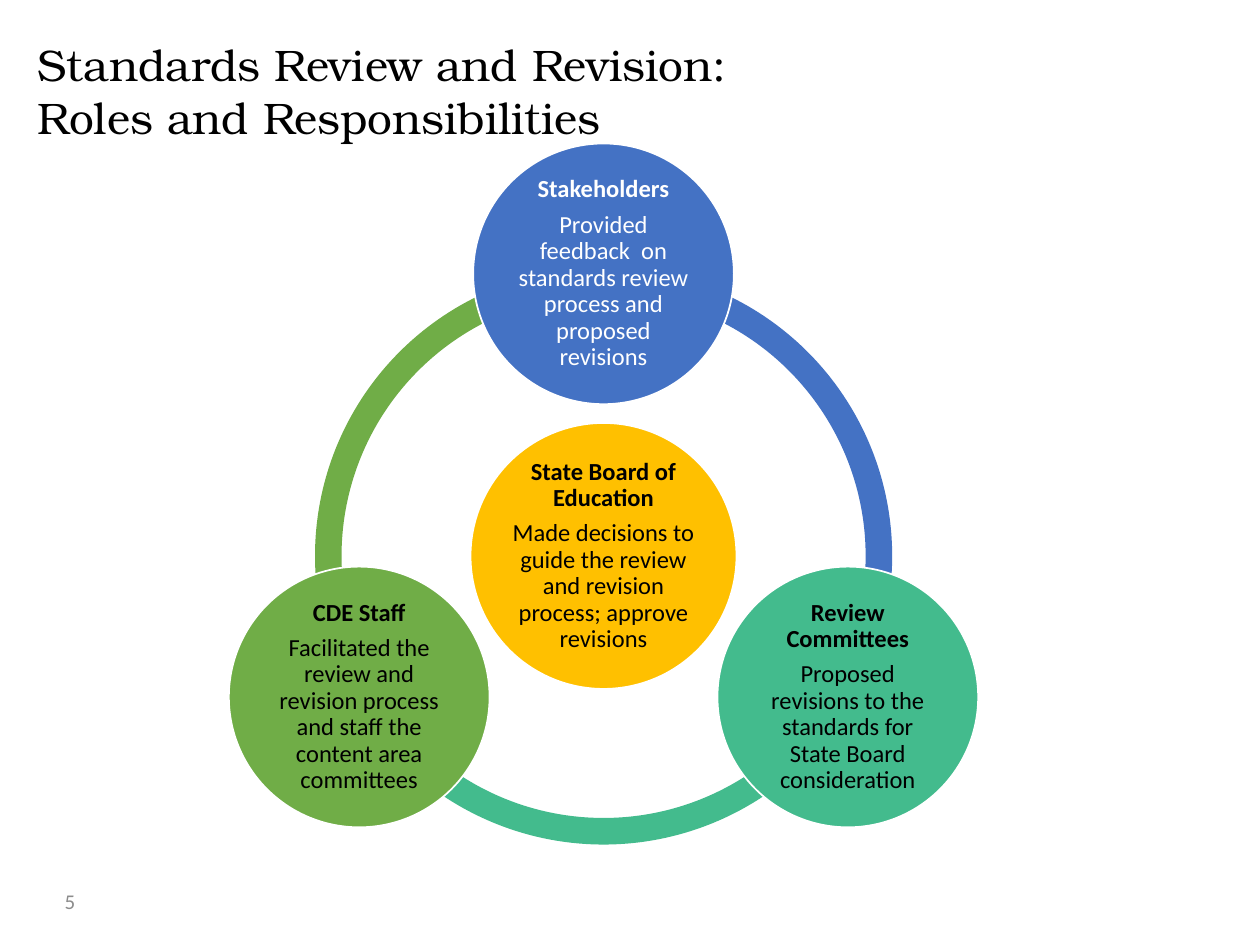
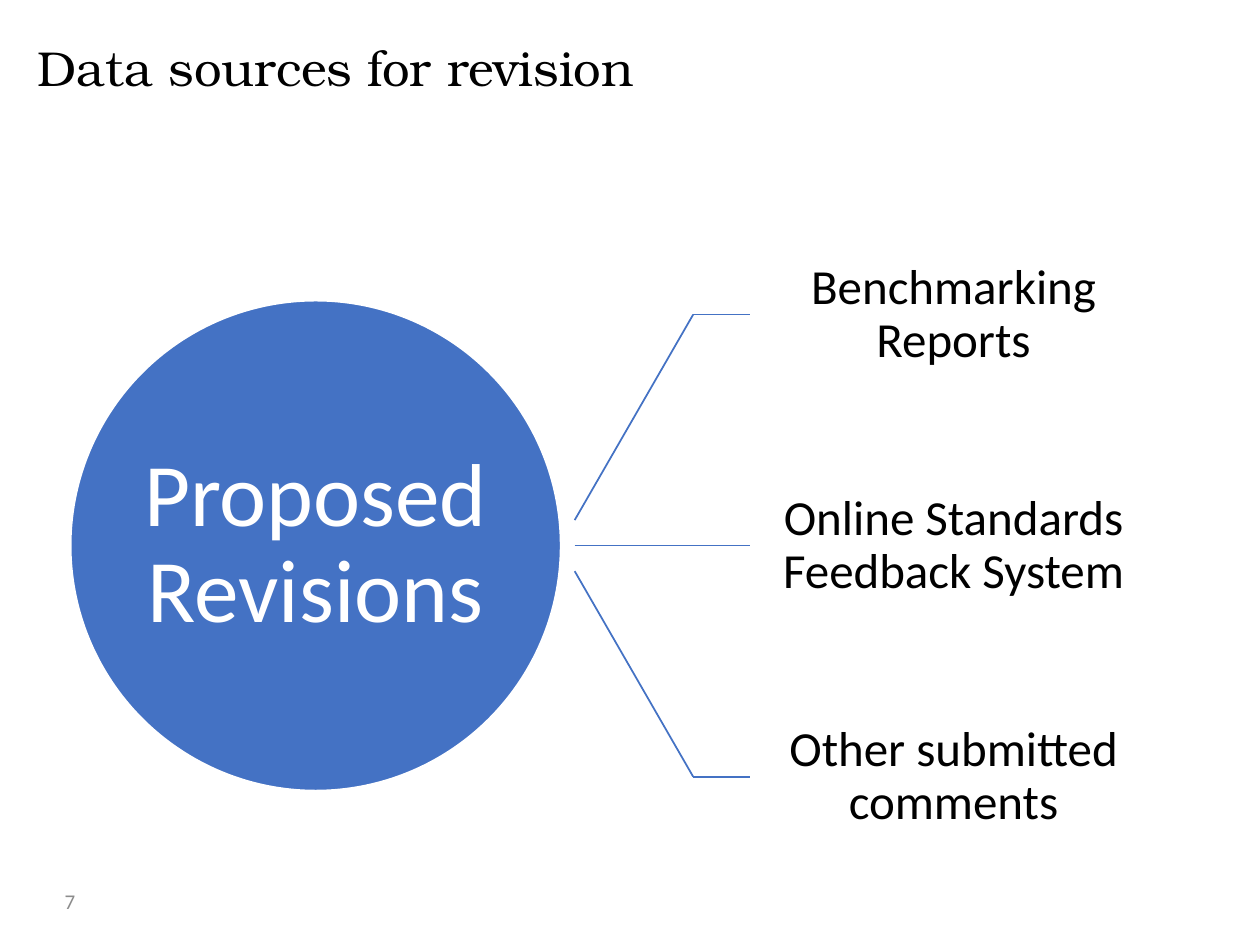
import math

from lxml import etree
from pptx import Presentation
from pptx.dml.color import RGBColor
from pptx.enum.shapes import MSO_CONNECTOR, MSO_SHAPE
from pptx.enum.text import MSO_ANCHOR, PP_ALIGN
from pptx.oxml.ns import qn
from pptx.util import Pt

BLUE = RGBColor(0x44, 0x72, 0xC4)
TEAL = RGBColor(0x43, 0xBB, 0x8D)
GREEN = RGBColor(0x70, 0xAD, 0x47)
GOLD = RGBColor(0xFF, 0xC0, 0x00)
GRAY = RGBColor(0x8C, 0x8C, 0x8C)
BLACK = RGBColor(0, 0, 0)
WHITE = RGBColor(0xFF, 0xFF, 0xFF)

TITLE_FONT = "TeX Gyre Bonum"
BODY_FONT = "Calibri"

LEFT, CENTER = PP_ALIGN.LEFT, PP_ALIGN.CENTER
TOP, MIDDLE = MSO_ANCHOR.TOP, MSO_ANCHOR.MIDDLE
ELLIPSE, BLOCK_ARC = MSO_SHAPE.OVAL, MSO_SHAPE.BLOCK_ARC
STRAIGHT = MSO_CONNECTOR.STRAIGHT
LEFT_SIDE = 1

STAKEHOLDERS = ("Stakeholders", "Provided feedback  on standards review process and proposed revisions")
COMMITTEES = ("Review Committees", "Proposed revisions to the standards for State Board consideration")
STAFF = ("CDE Staff", "Facilitated the review and revision process and staff the content area committees")
BOARD = ("State Board of Education", "Made decisions to guide the review and revision process; approve revisions")

ROLES = [
    (STAKEHOLDERS, BLUE, WHITE),
    (COMMITTEES, TEAL, BLACK),
    (STAFF, GREEN, BLACK),
]
SOURCES = ["Benchmarking Reports", "Online Standards Feedback System", "Other submitted comments"]


def write_text(shape, lines, size, color, inset, anchor=MIDDLE, align=CENTER,
               font=BODY_FONT, diagram=False):
    frame = shape.text_frame
    frame.word_wrap = True
    frame.vertical_anchor = anchor
    frame.margin_left = frame.margin_right = Pt(inset)
    frame.margin_top = frame.margin_bottom = Pt(inset)
    frame.text = "\n".join(lines)
    for paragraph in frame.paragraphs:
        paragraph.alignment = align
        paragraph.font.name = font
        paragraph.font.size = Pt(size)
        paragraph.font.color.rgb = color
        if diagram:
            paragraph.line_spacing = 0.9
            paragraph.space_after = Pt(0.35 * size)


def add_text_box(slide, left, top, width, height):
    return slide.shapes.add_textbox(Pt(left), Pt(top), Pt(width), Pt(height))


def add_circle(slide, center_x, center_y, diameter, fill):
    circle = slide.shapes.add_shape(
        ELLIPSE, Pt(center_x - diameter / 2), Pt(center_y - diameter / 2), Pt(diameter), Pt(diameter))
    circle.shadow.inherit = False
    circle.fill.solid()
    circle.fill.fore_color.rgb = fill
    circle.line.color.rgb = WHITE
    circle.line.width = Pt(1)
    return circle


def add_line(slide, start, end):
    line = slide.shapes.add_connector(STRAIGHT, *(Pt(value) for value in start + end))
    line.line.color.rgb = BLUE
    line.line.width = Pt(1)
    etree.SubElement(line._element.spPr, qn("a:effectLst"))
    return line


def add_titled_slide(presentation, title, title_size, number):
    slide = presentation.slides.add_slide(presentation.slide_layouts[6])
    title_box = add_text_box(slide, 21.6, 21.6, 620.6, 56.2)
    write_text(title_box, [title], title_size, BLACK, 0, TOP, LEFT, TITLE_FONT)
    number_box = add_text_box(slide, 21.6, 500.4, 36.7, 28.8)
    write_text(number_box, [number], 12, GRAY, 3.6)
    return slide


def add_role(slide, center_x, center_y, diameter, role, fill, color):
    circle = add_circle(slide, center_x, center_y, diameter, fill)
    write_text(circle, role, 14, color, 1.4, diagram=True)
    circle.text_frame.paragraphs[0].font.bold = True


def add_role_cycle(slide, left, top, size):
    center_x, center_y = left + size / 2, top + size / 2
    orbit = 161.2
    step = 360 / len(ROLES)
    angles = [270 + step * index for index in range(len(ROLES))]
    for angle, (_, fill, _) in zip(angles, ROLES):
        arc = slide.shapes.add_shape(BLOCK_ARC, Pt(left), Pt(top), Pt(size), Pt(size))
        arc.adjustments[0] = angle % 360 * 0.6
        arc.adjustments[1] = (angle + step) % 360 * 0.6
        arc.adjustments[2] = 0.046
        arc.shadow.inherit = False
        arc.fill.solid()
        arc.fill.fore_color.rgb = fill
        arc.line.fill.background()
    add_role(slide, center_x, center_y, 152, BOARD, GOLD, BLACK)
    for angle, (role, fill, color) in zip(angles, ROLES):
        turn = math.radians(angle)
        add_role(slide, center_x + orbit * math.cos(turn), center_y + orbit * math.sin(turn),
                 149, role, fill, color)


def add_source_fan(slide, left, top, width, height):
    diameter = 280
    middle = top + height / 2
    fan_x, elbow_x, label_x = left + 288, left + 355.7, left + 388.2
    row_height = height / len(SOURCES)
    circle = add_circle(slide, left + diameter / 2, middle, diameter, BLUE)
    write_text(circle, ["Proposed Revisions"], 51, WHITE, 0, diagram=True)
    for index, source in enumerate(SOURCES):
        row_top = top + index * row_height
        row_middle = row_top + row_height / 2
        fan_y = middle + (index - 1) * 14.6
        label = add_text_box(slide, label_x, row_top, left + width - label_x, row_height)
        write_text(label, [source], 28, BLACK, 16, diagram=True)
        add_line(slide, (fan_x, fan_y), (elbow_x, row_middle))
        branch = add_line(slide, (elbow_x, row_middle), (label_x, row_middle))
        branch.end_connect(label, LEFT_SIDE)


def main():
    presentation = Presentation()
    presentation.slide_width = Pt(720)
    presentation.slide_height = Pt(540)
    roles_slide = add_titled_slide(
        presentation, "Standards Review and Revision:\vRoles and Responsibilities", 25.2, "5")
    add_role_cycle(roles_slide, 180, 152.8, 329.8)
    sources_slide = add_titled_slide(presentation, "Data sources for revision", 28, "7")
    add_source_fan(sources_slide, 40.4, 113.8, 620.8, 396)
    presentation.save("out.pptx")


if __name__ == "__main__":
    main()
